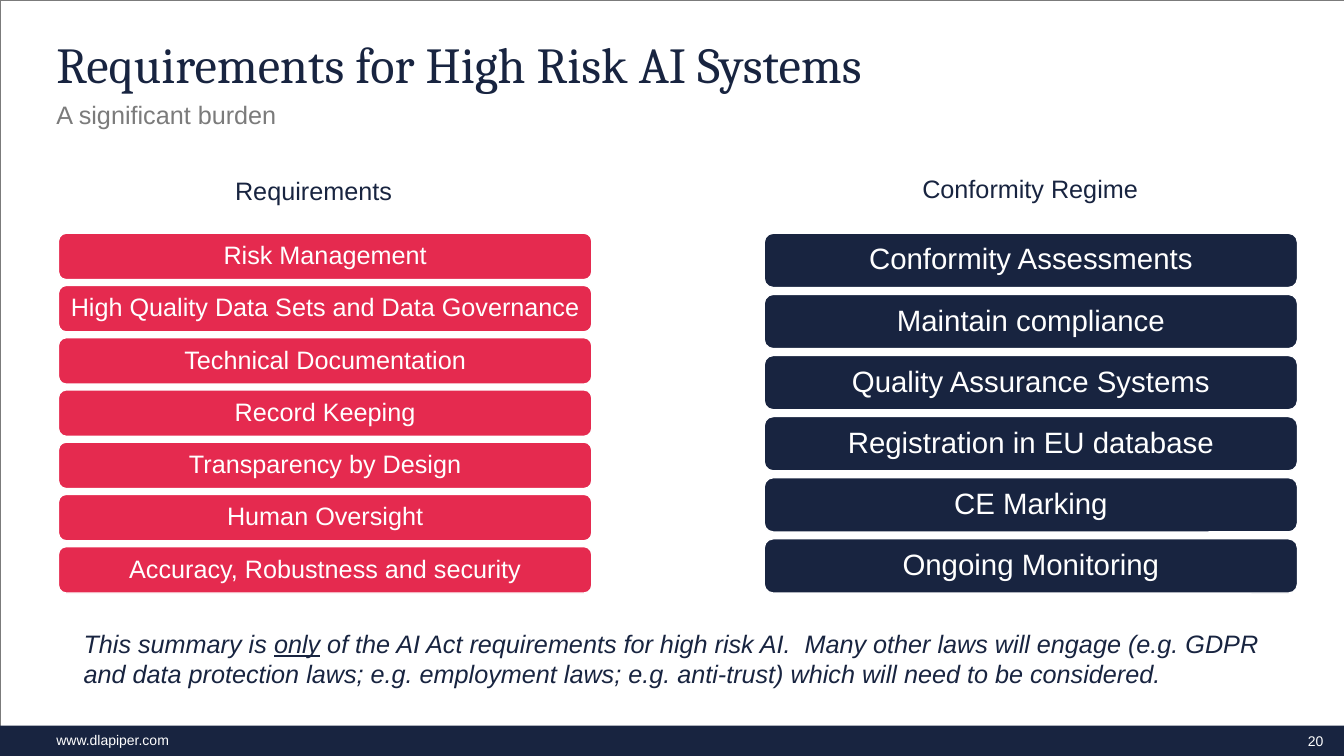
"""Builds the slide on requirements for high risk AI systems."""
import pptx
import pptx.util
import pptx.dml.color
import pptx.enum.shapes
import pptx.enum.text

RGBColor = pptx.dml.color.RGBColor
NAVY = RGBColor(0x18, 0x24, 0x40)
RED = RGBColor(0xE5, 0x2A, 0x4F)
GRAY = RGBColor(0x7B, 0x7B, 0x7B)
WHITE = RGBColor(0xFF, 0xFF, 0xFF)
KIND = pptx.enum.shapes.MSO_SHAPE
ALIGN = pptx.enum.text.PP_ALIGN
ANCHOR = pptx.enum.text.MSO_ANCHOR
LEFT, MID = ALIGN.LEFT, ALIGN.CENTER
Pt = pptx.util.Pt

WIDE, HIGH = pptx.util.Inches(13.33), pptx.util.Inches(7.5)
PAD = (0.1, 0.05, 0.1, 0.05)
FLAT = (0, 0, 0, 0)

# Boxes are left, top, width, height in percent of the slide.
TEXTS = [
    ("Requirements for High Risk AI Systems", (4.2, 5.33, 91.5, 8.4),
     36, "Cambria", NAVY, LEFT, FLAT, 0.9),
    ("A significant burden", (4.2, 13.07, 91.5, 3.47),
     18, "Arial", GRAY, LEFT, FLAT, 1.0),
    ("Requirements", (14.18, 22.53, 18.3, 5.33),
     18, "Arial", NAVY, MID, PAD, 1.0),
    ("Conformity Regime", (67.5, 22.27, 18.3, 5.33),
     18, "Arial", NAVY, MID, PAD, 1.0),
    ("www.dlapiper.com", (4.2, 96.13, 14.2, 3.6),
     10, "Arial", WHITE, LEFT, (0, 0.05, 0.1, 0.05), 1.0),
]
NUMBER = ("20", (95.8, 96, 4.2, 4), 10, "Arial", WHITE, MID, FLAT, 1.0)
NOTE = [
    ("This summary is ", False),
    ("only", True),
    (" of the AI Act requirements for high risk AI.  Many other laws will "
     "engage (e.g. GDPR and data protection laws; e.g. employment laws; "
     "e.g. anti-trust) which will need to be considered.", False),
]
STACKS = [
    (4.35, RED, 18, 0.07, [
        "Risk Management",
        "High Quality Data Sets and Data Governance",
        "Technical Documentation",
        "Record Keeping",
        "Transparency by Design",
        "Human Oversight",
        "Accuracy, Robustness and security",
    ]),
    (56.86, NAVY, 21, 0.09, [
        "Conformity Assessments",
        "Maintain compliance",
        "Quality Assurance Systems",
        "Registration in EU database",
        "CE Marking",
        "Ongoing Monitoring",
    ]),
]
TOP, SPAN, BAR, GAP = 30.85, 47.6, 39.68, 0.125


def place(box):
    """Turn percentages into slide lengths."""
    return [round(part * size / 100)
            for part, size in zip(box, (WIDE, HIGH, WIDE, HIGH))]


def style(font, size, name, color):
    """Set the look of a font."""
    font.size, font.name = Pt(size), name
    font.color.rgb = color


def inset(frame, pad):
    """Set wrapping and the four margins of a frame."""
    frame.word_wrap = True
    (frame.margin_left, frame.margin_top,
     frame.margin_right, frame.margin_bottom) = map(pptx.util.Inches, pad)


def fill_in(frame, text, size, name, color, align, pad, space):
    """Put one styled paragraph in a frame."""
    inset(frame, pad)
    frame.text = text
    para = frame.paragraphs[0]
    para.alignment, para.line_spacing = align, space
    style(para.runs[0].font, size, name, color)


def add_text(slide, text, box, *look):
    """Add a text box and return its frame."""
    frame = slide.shapes.add_textbox(*place(box)).text_frame
    fill_in(frame, text, *look)
    return frame


def add_box(slide, kind, box, fill=None, line=None, width=1):
    """Add a flat shape."""
    shape = slide.shapes.add_shape(kind, *place(box))
    shape.shadow.inherit = False
    if fill is None:
        shape.fill.background()
    else:
        shape.fill.solid()
        shape.fill.fore_color.rgb = fill
    if line is None:
        shape.line.fill.background()
    else:
        shape.line.color.rgb = line
        shape.line.width = Pt(width)
    return shape


def add_stack(slide, left, color, size, pad, labels):
    """Add a column of evenly spaced bars."""
    count = len(labels)
    tall = SPAN / (count + (count - 1) * GAP)
    for row, label in enumerate(labels):
        box = (left, TOP + row * tall * (1 + GAP), BAR, tall)
        bar = add_box(slide, KIND.ROUNDED_RECTANGLE, box, color, WHITE)
        bar.text_frame.vertical_anchor = ANCHOR.MIDDLE
        fill_in(bar.text_frame, label, size, "Arial", WHITE, MID,
                (pad,) * 4, 0.9)


def add_note(slide):
    """Add the closing remark."""
    frame = slide.shapes.add_textbox(*place((5.48, 82.4, 91, 9.47))).text_frame
    inset(frame, PAD)
    for text, under in NOTE:
        run = frame.paragraphs[0].add_run()
        run.text = text
        style(run.font, 18, "Arial", NAVY)
        run.font.italic, run.font.underline = True, under


def main():
    """Build and save the deck."""
    deck = pptx.Presentation()
    deck.slide_width, deck.slide_height = WIDE, HIGH
    slide = deck.slides.add_slide(deck.slide_layouts[6])
    add_box(slide, KIND.RECTANGLE, (0, 0, 100, 100), None, GRAY, 0.15)
    add_box(slide, KIND.RECTANGLE, (0, 96, 100, 4), NAVY)
    for item in TEXTS:
        add_text(slide, *item)
    add_text(slide, *NUMBER).vertical_anchor = ANCHOR.MIDDLE
    for stack in STACKS:
        add_stack(slide, *stack)
    add_note(slide)
    deck.save("out.pptx")


if __name__ == "__main__":
    main()
